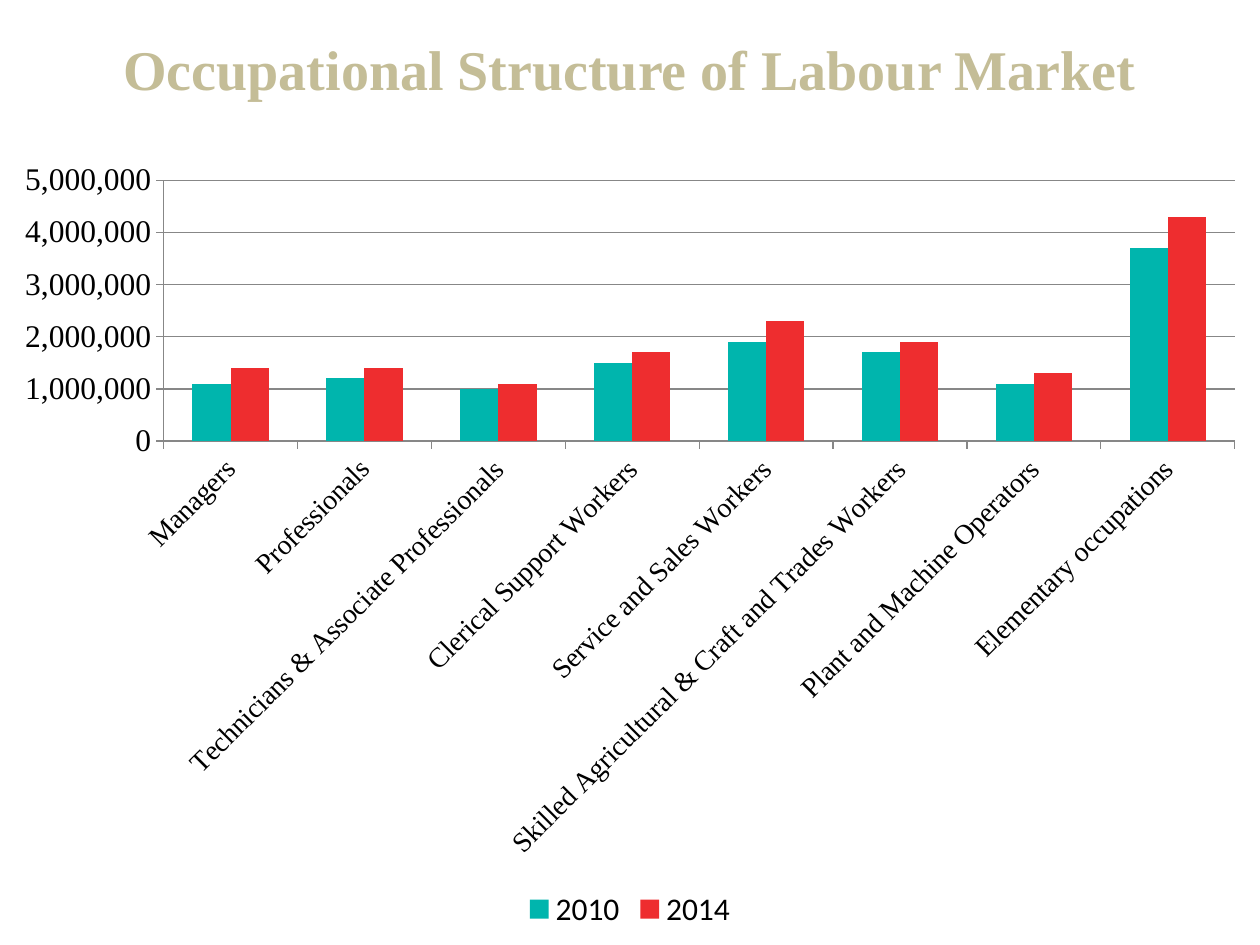
from dataclasses import dataclass

from pptx import Presentation
from pptx.chart.data import CategoryChartData
from pptx.dml.color import RGBColor
from pptx.enum.chart import XL_CHART_TYPE, XL_LEGEND_POSITION, XL_TICK_MARK
from pptx.enum.text import MSO_ANCHOR, PP_ALIGN
from pptx.util import Inches, Pt

CLUSTERED = XL_CHART_TYPE.COLUMN_CLUSTERED
BOTTOM = XL_LEGEND_POSITION.BOTTOM
OUTSIDE, NO_TICK = XL_TICK_MARK.OUTSIDE, XL_TICK_MARK.NONE
MIDDLE, CENTER = MSO_ANCHOR.MIDDLE, PP_ALIGN.CENTER
TITLE_ONLY = 5
WIDTH, HEIGHT = Inches(10), Inches(7.5)
MILLION = 1_000_000


@dataclass(frozen=True)
class Theme:
    serif: str = "Times New Roman"
    sans: str = "Calibri"
    title: RGBColor = RGBColor(0xC4, 0xBD, 0x97)
    text: RGBColor = RGBColor(0, 0, 0)
    rule: RGBColor = RGBColor(0x87, 0x87, 0x87)
    bars: tuple = (RGBColor(0x00, 0xB5, 0xAD), RGBColor(0xEE, 0x2D, 0x2F))
    title_size: Pt = Pt(32)
    chart_size: Pt = Pt(18)
    category_size: Pt = Pt(16)


THEME = Theme()

# Workers in millions: occupation, 2010, 2014
YEARS = ("2010", "2014")
OCCUPATIONS = (
    ("Managers", 1.1, 1.4),
    ("Professionals", 1.2, 1.4),
    ("Technicians & Associate Professionals", 1.0, 1.1),
    ("Clerical Support Workers", 1.5, 1.7),
    ("Service and Sales Workers", 1.9, 2.3),
    ("Skilled Agricultural & Craft and Trades Workers", 1.7, 1.9),
    ("Plant and Machine Operators", 1.1, 1.3),
    ("Elementary occupations", 3.7, 4.3),
)


def share_box(left, top, width, height):
    """Turn shares of the slide into left, top, width and height."""
    return (round(left * WIDTH), round(top * HEIGHT),
            round(width * WIDTH), round(height * HEIGHT))


def set_font(font, name, size, color, bold=False):
    font.name, font.size, font.bold = name, size, bold
    font.color.rgb = color


def place_title(page, box, wording):
    title = page.shapes.title
    title.left, title.top, title.width, title.height = box
    frame = title.text_frame
    frame.text = wording
    frame.vertical_anchor = MIDDLE
    para = frame.paragraphs[0]
    para.alignment = CENTER
    set_font(para.font, THEME.serif, THEME.title_size, THEME.title, bold=True)


def style_axis(axis, size):
    axis.major_tick_mark, axis.minor_tick_mark = OUTSIDE, NO_TICK
    axis.format.line.color.rgb = THEME.rule
    set_font(axis.tick_labels.font, THEME.serif, size, THEME.text)


def place_chart(page, box):
    # Data
    names, *columns = zip(*OCCUPATIONS)
    data = CategoryChartData(number_format="#,##0")
    data.categories = names
    for year, column in zip(YEARS, columns):
        data.add_series(year, [round(value * MILLION) for value in column])
    chart = page.shapes.add_chart(CLUSTERED, *box, data).chart
    chart.has_title = False
    set_font(chart.font, THEME.sans, THEME.chart_size, THEME.text)

    # Bars
    plot = chart.plots[0]
    plot.gap_width, plot.overlap, plot.vary_by_categories = 150, 0, False
    for series, color in zip(plot.series, THEME.bars):
        series.format.fill.solid()
        series.format.fill.fore_color.rgb = color

    # Axes, with slanted occupation names
    style_axis(chart.category_axis, THEME.category_size)
    labels = chart.category_axis._element.txPr
    labels.bodyPr.set("rot", "-2700000")
    labels.bodyPr.set("vert", "horz")
    values = chart.value_axis
    style_axis(values, THEME.chart_size)
    values.minimum_scale, values.maximum_scale = 0, 5 * MILLION
    values.major_unit = MILLION
    values.tick_labels.number_format = "#,##0"
    values.tick_labels.number_format_is_linked = False
    values.major_gridlines.format.line.color.rgb = THEME.rule

    # Legend
    chart.has_legend = True
    chart.legend.position = BOTTOM
    chart.legend.include_in_layout = False
    set_font(chart.legend.font, THEME.sans, THEME.chart_size, THEME.text)


def main():
    deck = Presentation()
    deck.slide_width, deck.slide_height = WIDTH, HEIGHT
    page = deck.slides.add_slide(deck.slide_layouts[TITLE_ONLY])
    place_title(page, share_box(0, 0, 1, 0.144),
                "Occupational Structure of Labour Market")
    place_chart(page, share_box(0, 0.156, 1, 0.833))
    deck.save("out.pptx")


if __name__ == "__main__":
    main()
